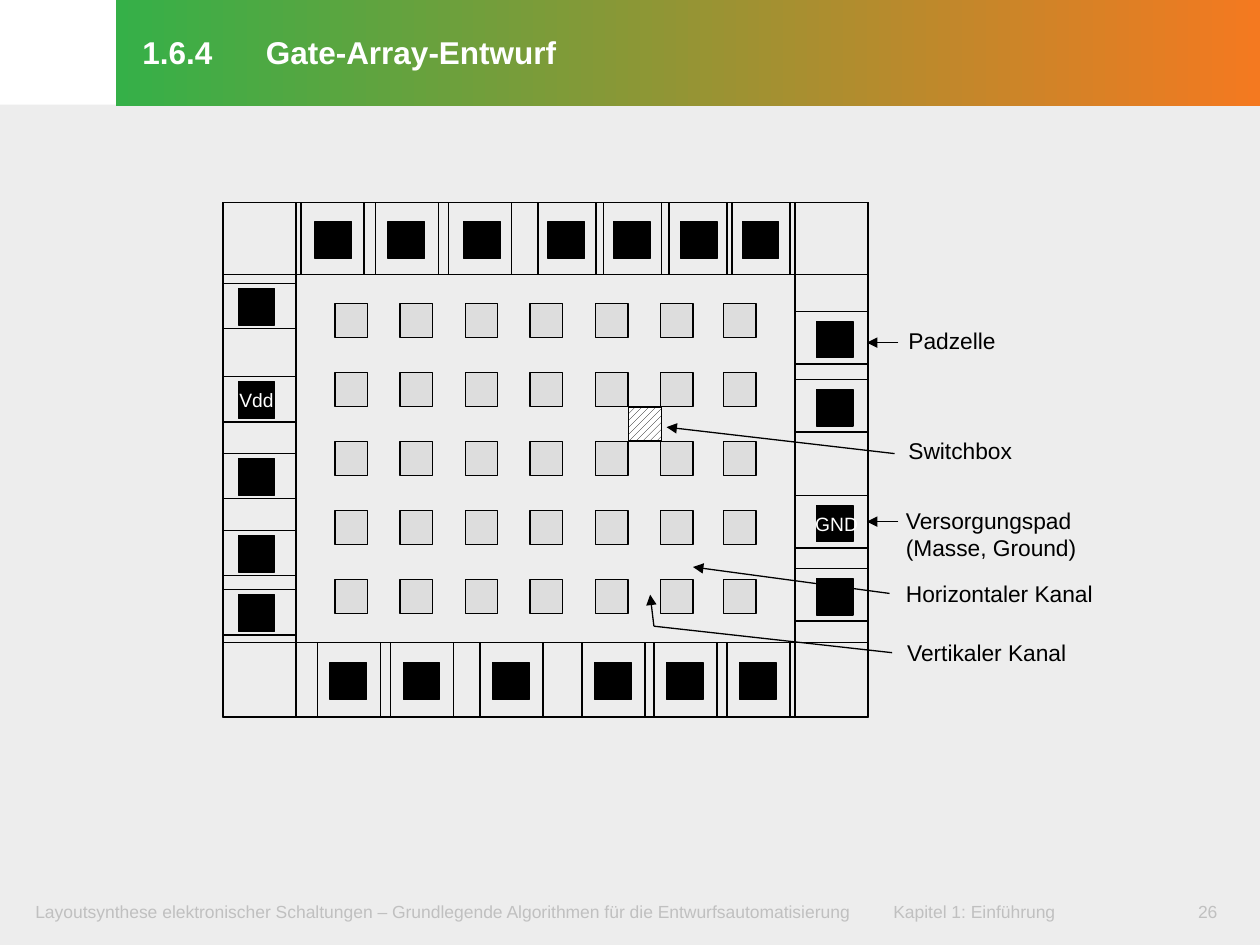
from dataclasses import dataclass
from itertools import product

from lxml.etree import SubElement
from pptx import Presentation
from pptx.dml.color import RGBColor
from pptx.enum.dml import MSO_PATTERN
from pptx.enum.shapes import MSO_CONNECTOR, MSO_SHAPE
from pptx.enum.text import MSO_ANCHOR, PP_ALIGN
from pptx.oxml.ns import qn
from pptx.util import Inches, Pt

BLACK, WHITE, GREY = "000000", "FFFFFF", "C0C0C0"
FRAME_LEFT, CORE_LEFT, CORE_RIGHT, FRAME_RIGHT = 1.77, 2.35, 6.31, 6.89
FRAME_TOP, CORE_TOP, CORE_BOTTOM, FRAME_BOTTOM = 1.61, 2.18, 5.10, 5.69
PAD_SIZE = 0.29


@dataclass
class PadCell:
    start: float
    pad_start: float
    length: float


@dataclass
class Label:
    text: str
    left: float
    top: float
    width: float
    height: float = 0.32
    size: float = 13
    color: str = BLACK


@dataclass
class Pointer:
    """A path from a label to its target; the arrowhead is at the last point."""
    points: list[tuple[float, float]]


TOP_CELLS = [
    PadCell(2.39, 2.50, 0.50), PadCell(2.98, 3.08, 0.50), PadCell(3.56, 3.68, 0.50),
    PadCell(4.27, 4.35, 0.46), PadCell(4.79, 4.87, 0.46), PadCell(5.31, 5.40, 0.46),
    PadCell(5.81, 5.89, 0.46),
]
BOTTOM_CELLS = [PadCell(start, start + 0.1, 0.50) for start in (2.52, 3.10, 3.81, 4.62, 5.19, 5.77)]
LEFT_CELLS = [PadCell(start, start + 0.04, 0.36) for start in (2.25, 2.99, 3.60, 4.21, 4.68)]
RIGHT_CELLS = [PadCell(start, start + 0.08, 0.42) for start in (2.47, 3.01, 3.93, 4.51)]

LABELS = [
    Label("Padzelle", 7.10, 2.54, 1.09),
    Label("Switchbox", 7.10, 3.42, 1.92),
    Label("Versorgungspad\v(Masse, Ground)", 7.08, 3.97, 1.72, 0.53),
    Label("Horizontaler Kanal", 7.08, 4.55, 1.92),
    Label("Vertikaler Kanal", 7.09, 5.02, 1.92),
    Label("GND", 6.36, 4.02, 0.62, 0.28, 11, WHITE),
    Label("Vdd", 1.79, 3.03, 0.62, 0.28, 11, WHITE),
]
POINTERS = [
    Pointer([(7.13, 2.72), (6.88, 2.72)]),
    Pointer([(7.10, 3.60), (5.29, 3.39)]),
    Pointer([(7.13, 4.14), (6.88, 4.14)]),
    Pointer([(7.06, 4.71), (5.50, 4.50)]),
    Pointer([(7.08, 5.18), (5.19, 4.97), (5.16, 4.72)]),
]


def rgb(color: str) -> RGBColor:
    return RGBColor.from_string(color)


def add_box(slide, left: float, top: float, width: float, height: float,
            fill: str | None = None, line: str | None = BLACK):
    shape = slide.shapes.add_shape(MSO_SHAPE.RECTANGLE, Inches(left), Inches(top),
                                   Inches(width), Inches(height))
    shape.shadow.inherit = False
    if fill:
        shape.fill.solid()
        shape.fill.fore_color.rgb = rgb(fill)
    else:
        shape.fill.background()
    if line:
        shape.line.color.rgb = rgb(line)
        shape.line.width = Pt(0.75)
    else:
        shape.line.fill.background()
    return shape


def write_text(shape, text: str, *, size: float, color: str, bold: bool = False,
               align=PP_ALIGN.LEFT, anchor=MSO_ANCHOR.TOP, tab: float | None = None,
               margins: tuple[float, float, float, float] = (0.11, 0.05, 0.11, 0.05)) -> None:
    frame = shape.text_frame
    frame.word_wrap = True
    frame.vertical_anchor = anchor
    frame.margin_left, frame.margin_top, frame.margin_right, frame.margin_bottom = map(Inches, margins)
    paragraph = frame.paragraphs[0]
    paragraph.text = text
    paragraph.alignment = align
    if tab:
        tab_list = SubElement(paragraph._p.get_or_add_pPr(), qn("a:tabLst"))
        SubElement(tab_list, qn("a:tab"), pos=str(Inches(tab)), algn="l")
    for run in paragraph.runs:
        run.font.name = "Arial"
        run.font.size = Pt(size)
        run.font.bold = bold
        run.font.color.rgb = rgb(color)


def add_text(slide, left: float, top: float, width: float, height: float, text: str, **text_format) -> None:
    box = slide.shapes.add_textbox(Inches(left), Inches(top), Inches(width), Inches(height))
    write_text(box, text, **text_format)


def add_pointer(slide, pointer: Pointer) -> None:
    for begin, end in zip(pointer.points, pointer.points[1:]):
        connector = slide.shapes.add_connector(MSO_CONNECTOR.STRAIGHT, *map(Inches, begin + end))
        connector.line.color.rgb = rgb(BLACK)
        connector.line.width = Pt(0.75)
        if end == pointer.points[-1]:
            SubElement(connector.line._get_or_add_ln(), qn("a:tailEnd"), type="triangle")
        SubElement(connector._element.spPr, qn("a:effectLst"))


def add_pad_row(slide, cells: list[PadCell], top: float, height: float, pad_top: float) -> None:
    for cell in cells:
        add_box(slide, cell.start, top, cell.length, height)
        add_box(slide, cell.pad_start, pad_top, PAD_SIZE, PAD_SIZE, BLACK)


def add_pad_column(slide, cells: list[PadCell], left: float, width: float, pad_left: float) -> None:
    for cell in cells:
        add_box(slide, left, cell.start, width, cell.length)
        add_box(slide, pad_left, cell.pad_start, PAD_SIZE, PAD_SIZE, BLACK)


def add_header_and_footer(slide) -> None:
    add_box(slide, 0, 0.83, 10, 6.67, "EDEDED", None)
    footer_format = dict(size=10, color=GREY, margins=(0.12, 0.06, 0.12, 0.06))
    add_text(slide, 0.16, 7.09, 8.85, 0.32,
             "Layoutsynthese elektronischer Schaltungen – Grundlegende Algorithmen "
             "für die Entwurfsautomatisierung\tKapitel 1: Einführung", tab=6.81, **footer_format)
    add_text(slide, 9.29, 7.09, 0.59, 0.32, "26", align=PP_ALIGN.CENTER, **footer_format)

    title = add_box(slide, 0.92, 0, 9.08, 0.84, line=None)
    title.fill.gradient()
    title.fill.gradient_angle = 0
    for stop, color in zip(title.fill.gradient_stops, ("35B048", "F47920")):
        stop.color.rgb = rgb(color)
    write_text(title, "1.6.4\tGate-Array-Entwurf", size=18, color=WHITE, bold=True,
               anchor=MSO_ANCHOR.MIDDLE, tab=0.98, margins=(0.21, 0.05, 0.1, 0.07))


def add_gate_array(slide) -> None:
    add_box(slide, CORE_LEFT, CORE_TOP, CORE_RIGHT - CORE_LEFT, CORE_BOTTOM - CORE_TOP)
    add_box(slide, FRAME_LEFT, FRAME_TOP, FRAME_RIGHT - FRAME_LEFT, FRAME_BOTTOM - FRAME_TOP)
    columns = [(FRAME_LEFT, CORE_LEFT - FRAME_LEFT), (CORE_RIGHT, FRAME_RIGHT - CORE_RIGHT)]
    rows = [(FRAME_TOP, CORE_TOP - FRAME_TOP), (CORE_BOTTOM, FRAME_BOTTOM - CORE_BOTTOM)]
    for (left, width), (top, height) in product(columns, rows):
        add_box(slide, left, top, width, height)

    for cells, row, pad_top in zip((TOP_CELLS, BOTTOM_CELLS), rows, (1.76, 5.26)):
        add_pad_row(slide, cells, *row, pad_top)
    for cells, column, pad_left in zip((LEFT_CELLS, RIGHT_CELLS), columns, (1.89, 6.48)):
        add_pad_column(slide, cells, *column, pad_left)

    gate_lefts = [2.66 + 0.516 * column for column in range(6)] + [5.74]
    gate_tops = [2.41 + 0.5475 * row for row in range(5)]
    for left, top in product(gate_lefts, gate_tops):
        add_box(slide, left, top, 0.26, 0.27, "DDDDDD")

    switchbox = add_box(slide, 4.99, 3.23, 0.26, 0.27)
    switchbox.fill.patterned()
    switchbox.fill.pattern = MSO_PATTERN.WIDE_UPWARD_DIAGONAL
    switchbox.fill.fore_color.rgb = rgb(BLACK)
    switchbox.fill.back_color.rgb = rgb(WHITE)


def main() -> None:
    presentation = Presentation()
    presentation.slide_width, presentation.slide_height = Inches(10), Inches(7.5)
    slide = presentation.slides.add_slide(presentation.slide_layouts[6])
    add_header_and_footer(slide)
    add_gate_array(slide)
    for label in LABELS:
        add_text(slide, label.left, label.top, label.width, label.height, label.text,
                 size=label.size, color=label.color)
    for pointer in POINTERS:
        add_pointer(slide, pointer)
    presentation.save("out.pptx")


if __name__ == "__main__":
    main()
